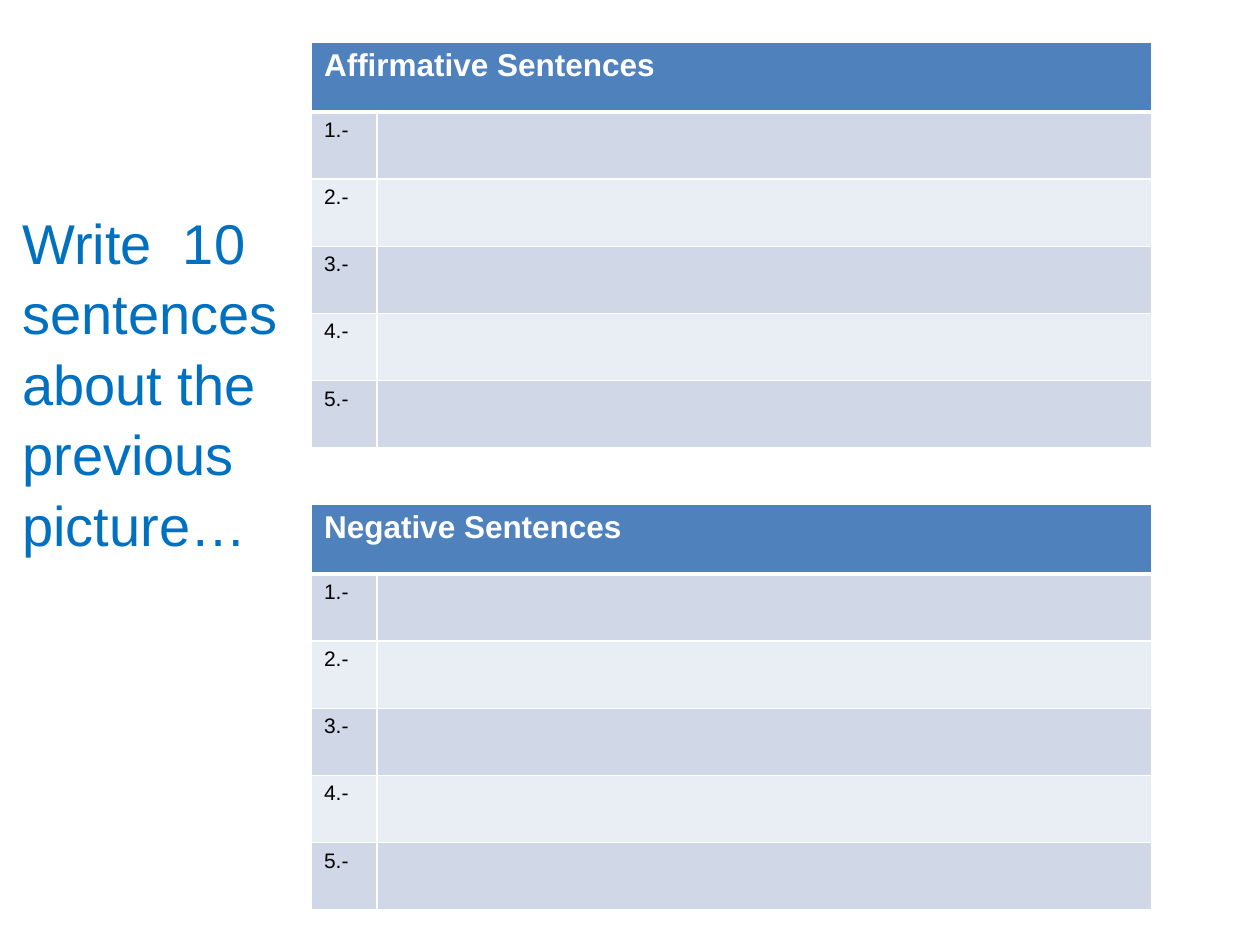
from dataclasses import dataclass

from lxml.etree import SubElement
from pptx import Presentation
from pptx.dml.color import RGBColor as Color
from pptx.oxml.ns import qn
from pptx.util import Pt


@dataclass(frozen=True)
class Theme:
    font: str = "Arial"
    prompt: str = "0070C0"
    header: str = "4F81BD"
    bands: tuple = ("D0D8E8", "E9EDF4")
    white: str = "FFFFFF"
    black: str = "000000"
    prompt_size: int = 32
    header_size: int = 18
    number_size: int = 12


THEME = Theme()


def add_run(paragraph, text, size, color, bold=False):
    run = paragraph.add_run()
    run.text = text
    run.font.name = THEME.font
    run.font.size = Pt(size)
    run.font.bold = bold
    run.font.color.rgb = Color.from_string(color)


def style_cell(cell, fill, top=1, bottom=1):
    """Give a cell white borders and a solid fill."""
    properties = cell._tc.get_or_add_tcPr()
    for side, width in (("L", 1), ("R", 1), ("T", top), ("B", bottom)):
        line = SubElement(properties, qn(f"a:ln{side}"), w=str(Pt(width)))
        solid = SubElement(line, qn("a:solidFill"))
        SubElement(solid, qn("a:srgbClr"), val=THEME.white)
    cell.fill.solid()
    cell.fill.fore_color.rgb = Color.from_string(fill)


def add_prompt(slide, left, top, width, height):
    box = slide.shapes.add_textbox(Pt(left), Pt(top), Pt(width), Pt(height))
    frame = box.text_frame
    frame.word_wrap = True
    lines = ("Write  10 sentences about the", "previous picture…")
    for index, text in enumerate(lines):
        paragraph = frame.add_paragraph() if index else frame.paragraphs[0]
        paragraph.line_spacing = 1.05
        add_run(paragraph, text, THEME.prompt_size, THEME.prompt)


def add_sentence_table(slide, title, left, top, width, height, count=5):
    shape = slide.shapes.add_table(
        count + 1, 2, Pt(left), Pt(top), Pt(width), Pt(height))
    table = shape.table
    number_width, header_height = 37.4, 40
    table.columns[0].width = Pt(number_width)
    table.columns[1].width = Pt(width - number_width)
    for row in table.rows:
        row.height = Pt((height - header_height) / count)
    table.rows[0].height = Pt(header_height)

    # Header across both columns
    header = table.cell(0, 0)
    header.merge(table.cell(0, 1))
    for column in range(2):
        style_cell(table.cell(0, column), THEME.header, bottom=3)
    add_run(header.text_frame.paragraphs[0], title,
            THEME.header_size, THEME.white, bold=True)

    # Numbered, banded rows
    for number in range(1, count + 1):
        band = THEME.bands[(number - 1) % 2]
        for column in range(2):
            style_cell(table.cell(number, column), band,
                       top=3 if number == 1 else 1)
        paragraph = table.cell(number, 0).text_frame.paragraphs[0]
        add_run(paragraph, f"{number}.-", THEME.number_size, THEME.black)


def main():
    presentation = Presentation()
    presentation.slide_width, presentation.slide_height = Pt(720), Pt(540)
    slide = presentation.slides.add_slide(presentation.slide_layouts[6])

    # Two matching tables, then the prompt beside them
    for title, top in (("Affirmative Sentences", 24), ("Negative Sentences", 288)):
        add_sentence_table(slide, title, 178, top, 480, 232)
    add_prompt(slide, 5.6, 113.4, 168.4, 201)

    presentation.save("out.pptx")


if __name__ == "__main__":
    main()
